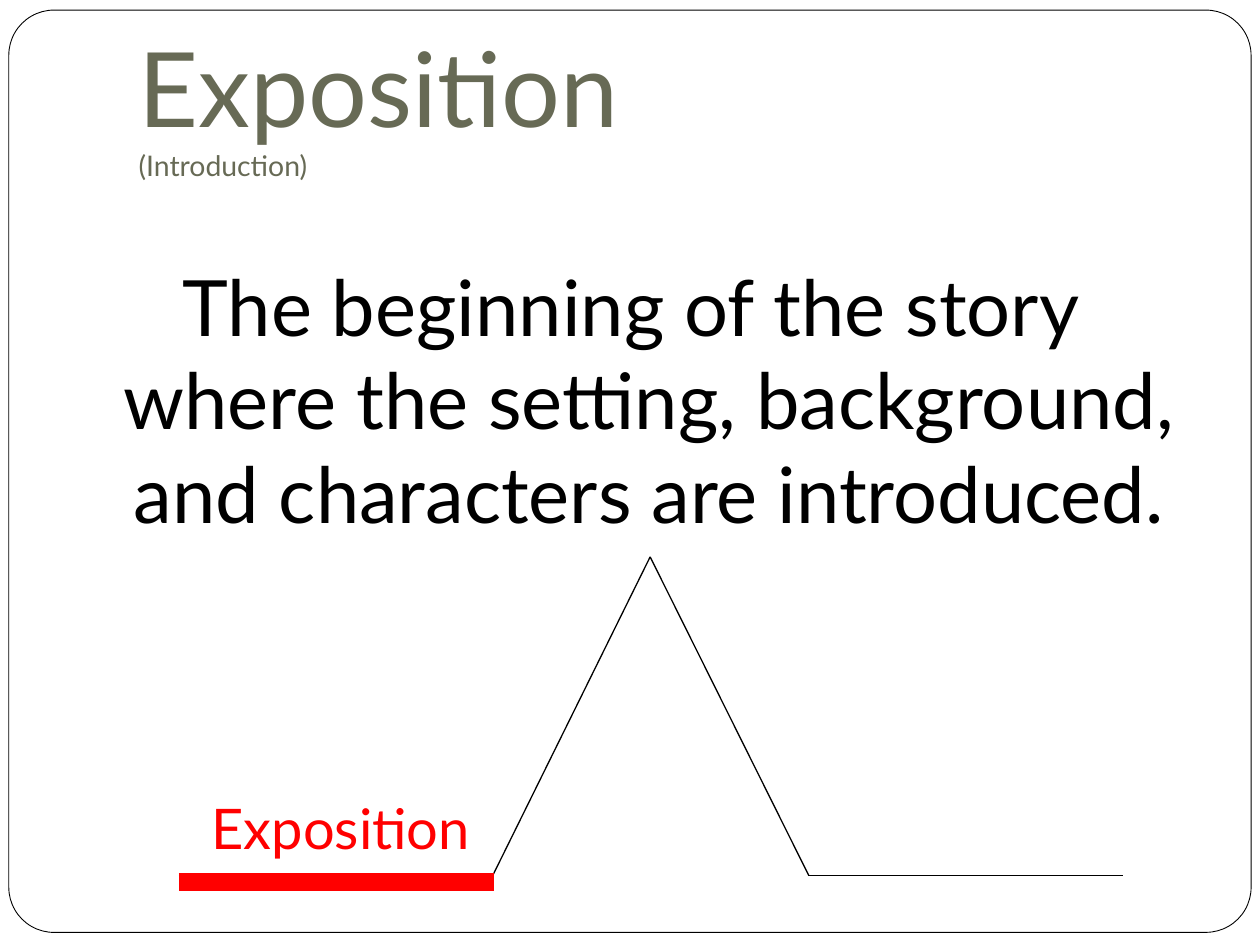
import itertools
from typing import NamedTuple

import pptx
import pptx.dml.color
import pptx.enum.shapes
import pptx.enum.text
import pptx.oxml.ns
import pptx.util
from lxml import etree

W, H = 10, 7.5
FONT = "Lato"
BLACK, WHITE, RED, OLIVE = "000000", "FFFFFF", "FF0000", "676A55"
ALIGN = pptx.enum.text.PP_ALIGN
ANCHOR = pptx.enum.text.MSO_ANCHOR
AUTO = pptx.enum.text.MSO_AUTO_SIZE
Inches, Pt = pptx.util.Inches, pptx.util.Pt


class Box(NamedTuple):
    """A rectangle in inches."""
    x: float
    y: float
    w: float
    h: float


class Point(NamedTuple):
    """A position as shares of the slide's width and height."""
    x: float
    y: float


FRAME = Box(0.07, 0.08, 9.86, 7.32)
TITLE = Box(1, 0.3, 8.5, 1.25)
BODY = Box(0.5, 1.75, 9, 2.83)
LABEL = Box(1.58, 6.25, 2.27, 0.64)

BASE, PEAK = 6.95 / H, 4.42 / H
PLOT_LINE = [Point(0.142, BASE), Point(0.391, BASE), Point(0.516, PEAK),
             Point(0.642, BASE), Point(0.891, BASE)]
MARKER = [Point(0.142, 7 / H), Point(0.392, 7 / H)]


def rgb(color: str):
    return pptx.dml.color.RGBColor.from_string(color)


def emu(box: Box) -> list:
    return [Inches(v) for v in box]


def add_text(p, text: str, *, size: float, color: str, align=ALIGN.LEFT):
    p.alignment = align
    r = p.add_run()
    r.text = text
    r.font.name, r.font.size = FONT, Pt(size)
    r.font.color.rgb = rgb(color)


def set_frame(tf, *, anchor, wrap: bool = True, auto_size=AUTO.NONE):
    tf.word_wrap, tf.auto_size = wrap, auto_size
    tf.vertical_anchor = anchor


def draw_line(shapes, start: Point, end: Point, color: str, width: float):
    line = shapes.add_connector(
        pptx.enum.shapes.MSO_CONNECTOR.STRAIGHT,
        Inches(start.x * W), Inches(start.y * H),
        Inches(end.x * W), Inches(end.y * H))
    line.line.color.rgb, line.line.width = rgb(color), Pt(width)
    etree.SubElement(line._element.spPr, pptx.oxml.ns.qn("a:effectLst"))


def draw_frame(s):
    sp = s.shapes.add_shape(
        pptx.enum.shapes.MSO_SHAPE.ROUNDED_RECTANGLE, *emu(FRAME))
    sp.adjustments[0] = 0.049
    sp.shadow.inherit = False
    sp.fill.solid()
    sp.fill.fore_color.rgb = rgb(WHITE)
    sp.line.color.rgb, sp.line.width = rgb(BLACK), Pt(0.5)
    s.shapes._spTree.insert(2, sp._element)  # behind the title


def fill_title(s):
    sp = s.shapes.title
    sp.left, sp.top, sp.width, sp.height = emu(TITLE)
    tf = sp.text_frame
    set_frame(tf, anchor=ANCHOR.BOTTOM)
    tf.margin_bottom = Inches(0.1)
    p = tf.paragraphs[0]
    add_text(p, "Exposition", size=59.4, color=OLIVE)
    p.add_line_break()
    add_text(p, "(Introduction)", size=16.2, color=OLIVE)


def add_body(s):
    tf = s.shapes.add_textbox(*emu(BODY)).text_frame
    set_frame(tf, anchor=ANCHOR.MIDDLE)
    p = tf.paragraphs[0]
    add_text(p, "The beginning of the story where the setting, background, "
                "and characters are introduced.",
             size=44.4, color=BLACK, align=ALIGN.CENTER)
    p.space_before = Pt(5.8)
    pPr = p._p.get_or_add_pPr()
    pPr.set("marL", str(Inches(0.3)))
    pPr.set("indent", str(-Inches(0.3)))


def add_label(s):
    tf = s.shapes.add_textbox(*emu(LABEL)).text_frame
    set_frame(tf, anchor=ANCHOR.TOP, wrap=False,
              auto_size=AUTO.SHAPE_TO_FIT_TEXT)
    add_text(tf.paragraphs[0], "Exposition", size=32, color=RED)


def main():
    prs = pptx.Presentation()
    prs.slide_width, prs.slide_height = Inches(W), Inches(H)
    s = prs.slides.add_slide(prs.slide_layouts[5])
    draw_frame(s)
    fill_title(s)
    add_body(s)
    plot = s.shapes.add_group_shape()
    for start, end in itertools.pairwise(PLOT_LINE):
        draw_line(plot.shapes, start, end, BLACK, 0.75)
    draw_line(s.shapes, *MARKER, RED, 10)
    add_label(s)
    prs.save("out.pptx")


if __name__ == "__main__":
    main()
